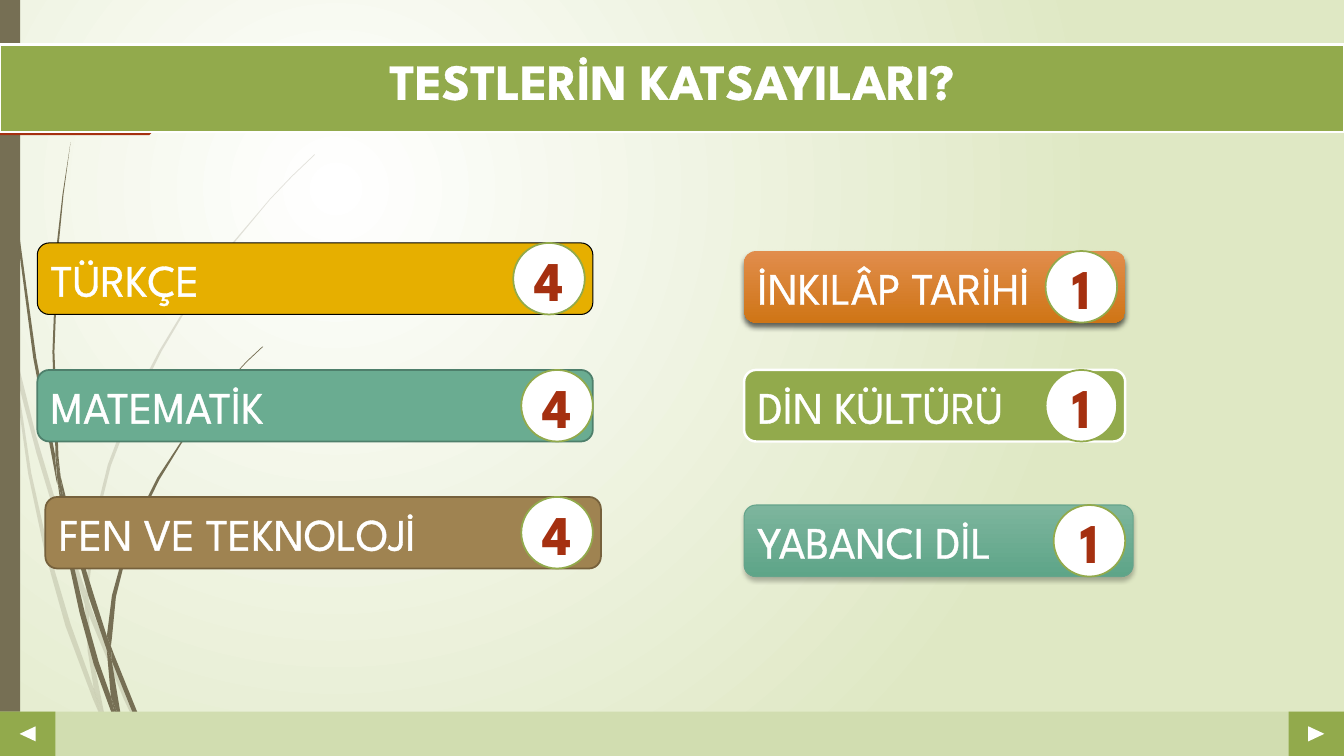
from dataclasses import dataclass

from pptx import Presentation
from pptx.dml.color import RGBColor
from pptx.enum.shapes import MSO_SHAPE
from pptx.enum.text import MSO_ANCHOR, MSO_AUTO_SIZE, PP_ALIGN
from pptx.oxml import parse_xml
from pptx.util import Inches, Pt

NAMESPACES = (
    'xmlns:a="http://schemas.openxmlformats.org/drawingml/2006/main" '
    'xmlns:p="http://schemas.openxmlformats.org/presentationml/2006/main"'
)


@dataclass(frozen=True)
class Theme:
    font: str = "League Spartan"
    title_size: int = 36
    subject_size: int = 32
    number_size: int = 40
    white: str = "FFFFFF"
    pale: str = "DFE8C4"
    footer: str = "D1DDB0"
    green: str = "92AA4C"
    olive: str = "766F54"
    red: str = "A53010"


theme = Theme()


def paint(shape, fill, line=None, width=0):
    """Fill with one colour, or with a top-to-bottom gradient for a pair."""
    shape.shadow.inherit = False
    if isinstance(fill, tuple):
        shape.fill.gradient()
        shape.fill.gradient_angle = 270
        for stop, color in zip(shape.fill.gradient_stops, fill):
            stop.color.rgb = RGBColor.from_string(color)
    else:
        shape.fill.solid()
        shape.fill.fore_color.rgb = RGBColor.from_string(fill)
    if line:
        shape.line.color.rgb = RGBColor.from_string(line)
        shape.line.width = Pt(width)
    else:
        shape.line.fill.background()


def write(shape, text, size, color, bold, align, anchor):
    """Set one line of text; white letters also get a white outline."""
    frame = shape.text_frame
    frame.word_wrap = True
    frame.auto_size = MSO_AUTO_SIZE.NONE
    frame.vertical_anchor = anchor
    para = frame.paragraphs[0]
    para.alignment = align
    span = para.add_run()
    span.text = text
    span.font.name = theme.font
    span.font.size = Pt(size)
    span.font.bold = bold
    span.font.color.rgb = RGBColor.from_string(color)
    if color == theme.white:
        span.font.fill._xPr.insert(0, parse_xml(
            f'<a:ln {NAMESPACES} w="{Pt(1.45)}"><a:solidFill>'
            f'<a:srgbClr val="{color}"/></a:solidFill></a:ln>'
        ))


deck = Presentation()
deck.slide_width = Inches(13.33)
deck.slide_height = Inches(7.5)
page = deck.slides.add_slide(deck.slide_layouts[5])
shapes = page.shapes

background = parse_xml(
    f'<p:bg {NAMESPACES}><p:bgPr><a:gradFill rotWithShape="1"><a:gsLst>'
    f'<a:gs pos="0"><a:srgbClr val="{theme.white}"/></a:gs>'
    f'<a:gs pos="100000"><a:srgbClr val="{theme.pale}"/></a:gs></a:gsLst>'
    '<a:path path="circle"><a:fillToRect l="50000" t="50000" r="100000" b="100000"/></a:path>'
    '</a:gradFill><a:effectLst/></p:bgPr></p:bg>'
)
shapes.element.getparent().insert(0, background)

# Outlines of the grass pieces, in inches
faint_grass = [
    [(0.11, 3.5), (0.09, 3.22), (0, 2.82), (0, 2.99), (0.1, 3.44)],
    [(0.58, 5.22), (0.84, 5.99), (0.85, 5.86), (0.62, 5.2), (0.36, 4.33), (0.14, 3.45),
     (0.17, 3.76), (0.36, 4.49)],
    [(0.92, 6.07), (0.88, 5.96), (0.88, 6.1), (1.23, 6.94), (1.5, 7.51), (1.55, 7.51), (1.27, 6.92)],
    [(1.19, 7.51), (1.24, 7.51), (1.05, 7.11)],
    [(0.93, 6.83), (0.7, 6.19), (0.48, 5.45), (0.31, 4.69), (0.17, 3.76), (0.11, 3.5),
     (0.28, 4.7), (0.44, 5.46), (0.65, 6.21), (0.92, 6.93), (1.01, 7.14), (0.99, 7.07)],
    [(0.84, 5.99), (0.87, 6.46), (0.93, 6.83), (0.96, 6.92), (1.05, 7.11), (1.03, 7.06),
     (0.91, 6.46), (0.88, 6.1), (0.88, 6.08)],
    [(0.88, 5.84), (0.95, 5.22), (1.1, 4.62), (1.32, 4.05), (1.6, 3.49), (1.92, 2.95), (2.29, 2.45),
     (2.68, 1.98), (2.9, 1.75), (3.12, 1.54), (3.12, 1.53), (2.89, 1.75), (2.68, 1.97), (2.28, 2.44),
     (1.9, 2.95), (1.58, 3.48), (1.29, 4.03), (1.07, 4.61), (0.92, 5.22), (0.85, 5.84),
     (0.85, 5.86), (0.88, 5.96)],
    [(1.01, 7.14), (1.14, 7.51), (1.19, 7.51)],
    [(0.88, 6.08), (0.88, 6.1), (0.88, 5.96), (0.85, 5.86), (0.84, 5.99)],
    [(0.96, 6.92), (0.93, 6.83), (0.99, 7.07), (1.01, 7.14), (1.19, 7.51), (1.05, 7.11)],
]
solid_grass = [
    [(0.07, 1.1), (0.17, 2.33), (0.33, 3.55), (0.56, 4.77), (0.57, 4.81), (0.55, 4.57), (0.55, 4.53),
     (0.36, 3.55), (0.19, 2.32), (0.08, 1.09), (0.05, 0.48), (0.04, 0), (0.03, 0), (0.04, 0.48)],
    [(0.88, 5.92), (1.06, 6.45), (1.06, 6.33), (1.06, 6.31), (0.93, 5.9), (0.75, 5.32),
     (0.6, 4.72), (0.64, 5.05)],
    [(1.13, 6.49), (1.1, 6.41), (1.11, 6.56), (1.32, 7.08), (1.52, 7.49), (1.57, 7.49), (1.36, 7.06)],
    [(1.1, 6.91), (0.98, 6.57), (0.84, 6.07), (0.72, 5.56), (0.64, 5.05), (0.57, 4.77), (0.68, 5.57),
     (0.79, 6.08), (0.93, 6.59), (1.11, 7.08), (1.17, 7.22), (1.16, 7.17)],
    [(0.6, 4.72), (0.58, 4.53), (0.54, 3.49), (0.58, 2.45), (0.63, 1.93), (0.7, 1.41),
     (0.62, 1.93), (0.56, 2.45), (0.52, 3.49), (0.55, 4.49)],
    [(1.33, 7.49), (1.36, 7.49), (1.22, 7.19)],
    [(0.57, 4.77), (0.64, 5.05), (0.6, 4.72), (0.55, 4.49), (0.55, 4.53)],
    [(1.11, 6.33), (1.15, 5.92), (1.25, 5.52), (1.4, 5.13), (1.58, 4.76), (1.8, 4.4), (2.05, 4.06),
     (2.31, 3.74), (2.45, 3.59), (2.61, 3.44), (2.6, 3.44), (2.45, 3.58), (2.31, 3.73), (2.04, 4.05),
     (1.79, 4.39), (1.56, 4.74), (1.37, 5.12), (1.22, 5.51), (1.11, 5.91), (1.06, 6.31), (1.1, 6.41)],
    [(1.17, 7.22), (1.27, 7.49), (1.31, 7.49)],
    [(1.06, 6.45), (1.1, 6.91), (1.16, 7.06), (1.22, 7.19), (1.21, 7.16), (1.11, 6.56), (1.09, 6.51)],
    [(1.06, 6.45), (1.09, 6.51), (1.11, 6.56), (1.1, 6.41), (1.06, 6.31), (1.06, 6.33)],
    [(1.16, 7.06), (1.1, 6.91), (1.16, 7.17), (1.17, 7.22), (1.3, 7.49), (1.33, 7.49), (1.22, 7.19)],
]
for opacity, pieces in [(20, faint_grass), (100, solid_grass)]:
    for piece in pieces:
        points = [(Inches(x), Inches(y)) for x, y in piece]
        outline = shapes.build_freeform(*points[0])
        outline.add_line_segments(points[1:], close=True)
        blade = outline.convert_to_shape()
        paint(blade, theme.olive)
        if opacity < 100:
            color = blade.element.xpath("./p:spPr/a:solidFill/a:srgbClr")[0]
            color.append(parse_xml(f'<a:alpha {NAMESPACES} val="{opacity * 1000}"/>'))

# Side strip, footer with its two arrows, and the tag under the title
for kind, left, top, width, height, rotation, fill in [
    (MSO_SHAPE.RECTANGLE, 0, 0, 0.2, 7.5, 0, theme.olive),
    (MSO_SHAPE.RECTANGLE, 0, 7.06, 13.33, 0.44, 0, theme.footer),
    (MSO_SHAPE.RECTANGLE, 12.78, 7.06, 0.55, 0.44, 0, theme.green),
    (MSO_SHAPE.RECTANGLE, 0, 7.06, 0.55, 0.44, 0, theme.green),
    (MSO_SHAPE.ISOSCELES_TRIANGLE, 12.98, 7.2, 0.15, 0.16, 90, theme.white),
    (MSO_SHAPE.ISOSCELES_TRIANGLE, 0.2, 7.2, 0.15, 0.16, 270, theme.white),
    (MSO_SHAPE.PENTAGON, 0, 0.78, 1.74, 0.56, 0, theme.red),
]:
    part = shapes.add_shape(kind, Inches(left), Inches(top), Inches(width), Inches(height))
    part.rotation = rotation
    paint(part, fill)
    if kind == MSO_SHAPE.PENTAGON:
        part.adjustments[0] = 0.46

title = shapes.title
title.left, title.top = Inches(0), Inches(0.44)
title.width, title.height = Inches(13.33), Inches(0.87)
paint(title, theme.green, theme.white, 1.75)
write(title, "TESTLERİN KATSAYILARI?", theme.title_size, theme.white, True,
      PP_ALIGN.CENTER, MSO_ANCHOR.TOP)
title.element.getparent().append(title.element)

# Subject, coefficient, left, top, width, number left, fill, line, line width,
# shadow (opacity in percent, blur, distance)
subjects = [
    ("TÜRKÇE", "4", 0.37, 2.41, 5.51, 5.09, "E6AF00", "000000", 0.75, None),
    ("MATEMATİK", "4", 0.37, 3.67, 5.51, 5.17, "6AAC91", "4E7F6B", 1.25, None),
    ("FEN VE TEKNOLOJİ", "4", 0.45, 4.93, 5.51, 5.17, "9F8351", "76613C", 1.25, None),
    ("İNKILÂP TARİHİ", "1", 7.38, 2.49, 3.78, 10.37, ("E18D4C", "CF7516"), None, 0, (60, 4, 3)),
    ("DİN KÜLTÜRÜ", "1", 7.38, 3.67, 3.78, 10.37, theme.green, theme.white, 1.75, None),
    ("YABANCI DİL", "1", 7.38, 5.01, 3.86, 10.45, ("7DB59D", "5EA588"), "65A48B", 0.75, (25, 3, 2)),
]
BAR_HEIGHT = Inches(0.71)
for subject, number, left, top, width, number_left, fill, line, line_width, shadow in subjects:
    bar = shapes.add_shape(MSO_SHAPE.FLOWCHART_ALTERNATE_PROCESS, Inches(left), Inches(top),
                           Inches(width), BAR_HEIGHT)
    paint(bar, fill, line, line_width)
    write(bar, subject, theme.subject_size, theme.white, False, PP_ALIGN.LEFT, MSO_ANCHOR.MIDDLE)
    if shadow:
        opacity, blur, distance = shadow
        effects = bar.element.xpath("./p:spPr/a:effectLst")[0]
        effects.append(parse_xml(
            f'<a:outerShdw {NAMESPACES} blurRad="{Pt(blur)}" dist="{Pt(distance)}" dir="5400000" '
            f'rotWithShape="0"><a:srgbClr val="000000"><a:alpha val="{opacity * 1000}"/>'
            '</a:srgbClr></a:outerShdw>'
        ))
    circle = shapes.add_shape(MSO_SHAPE.OVAL, Inches(number_left), Inches(top),
                              BAR_HEIGHT, BAR_HEIGHT)
    paint(circle, theme.white, theme.green, 1.25)
    write(circle, number, theme.number_size, theme.red, True, PP_ALIGN.CENTER, MSO_ANCHOR.MIDDLE)

deck.save("out.pptx")
